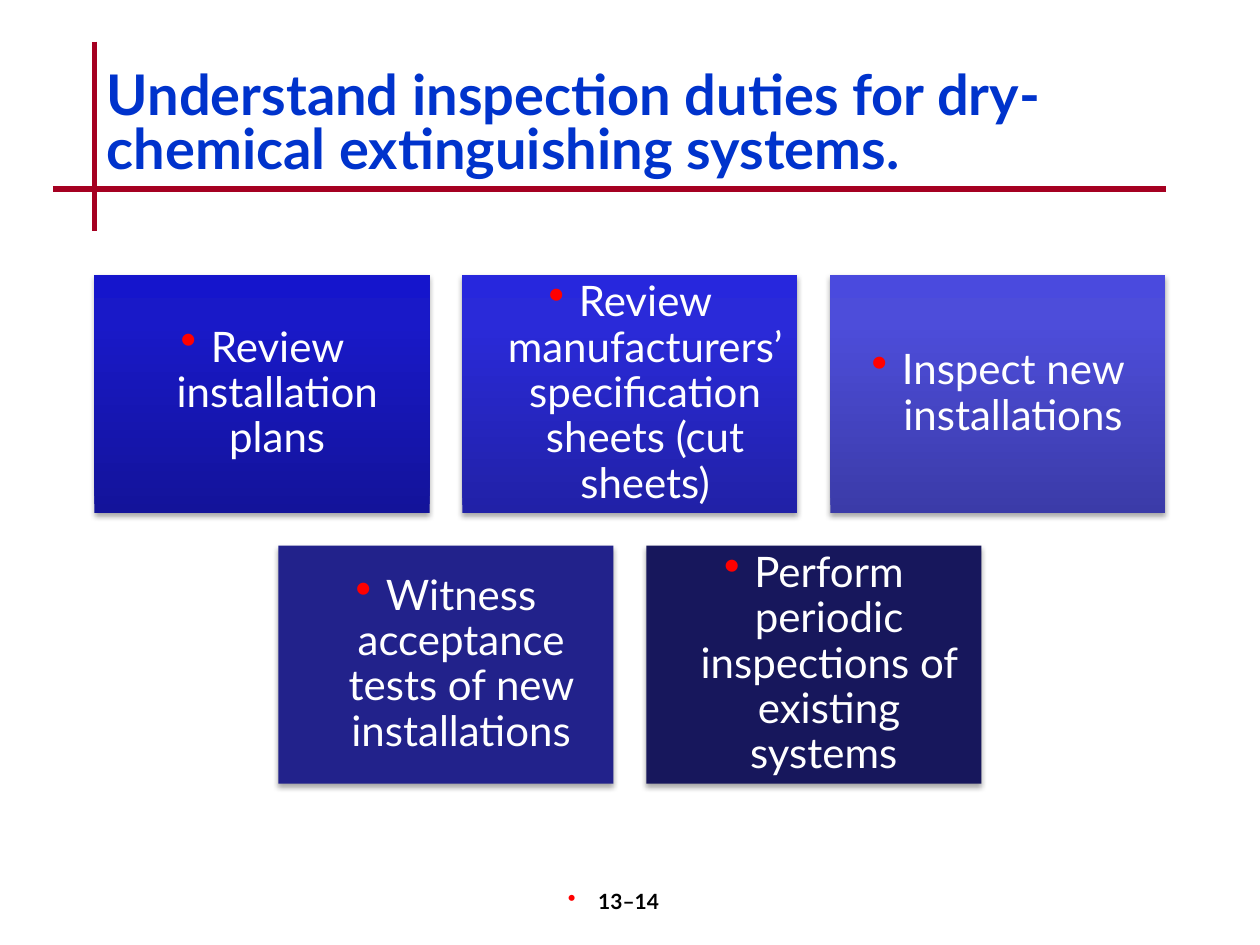
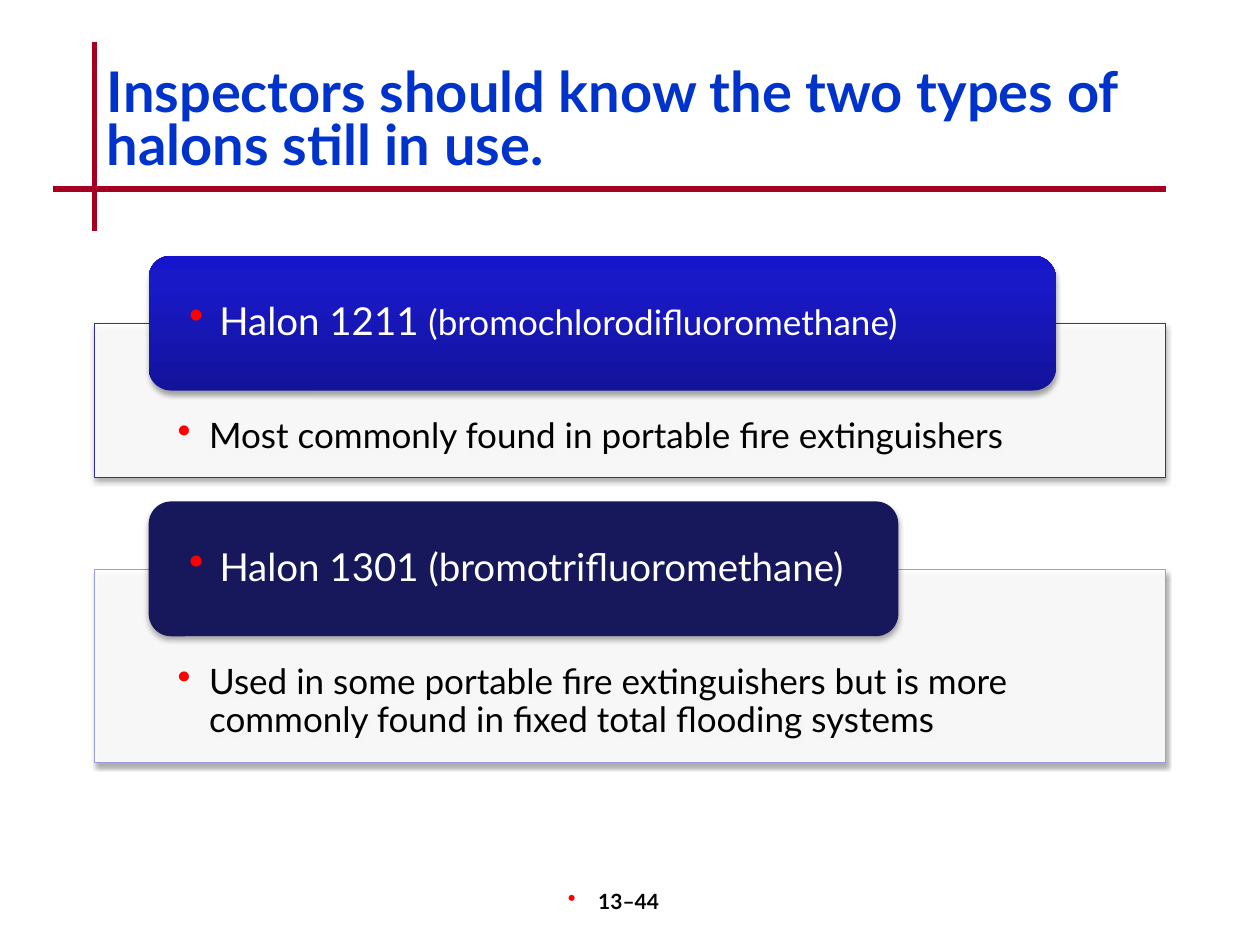
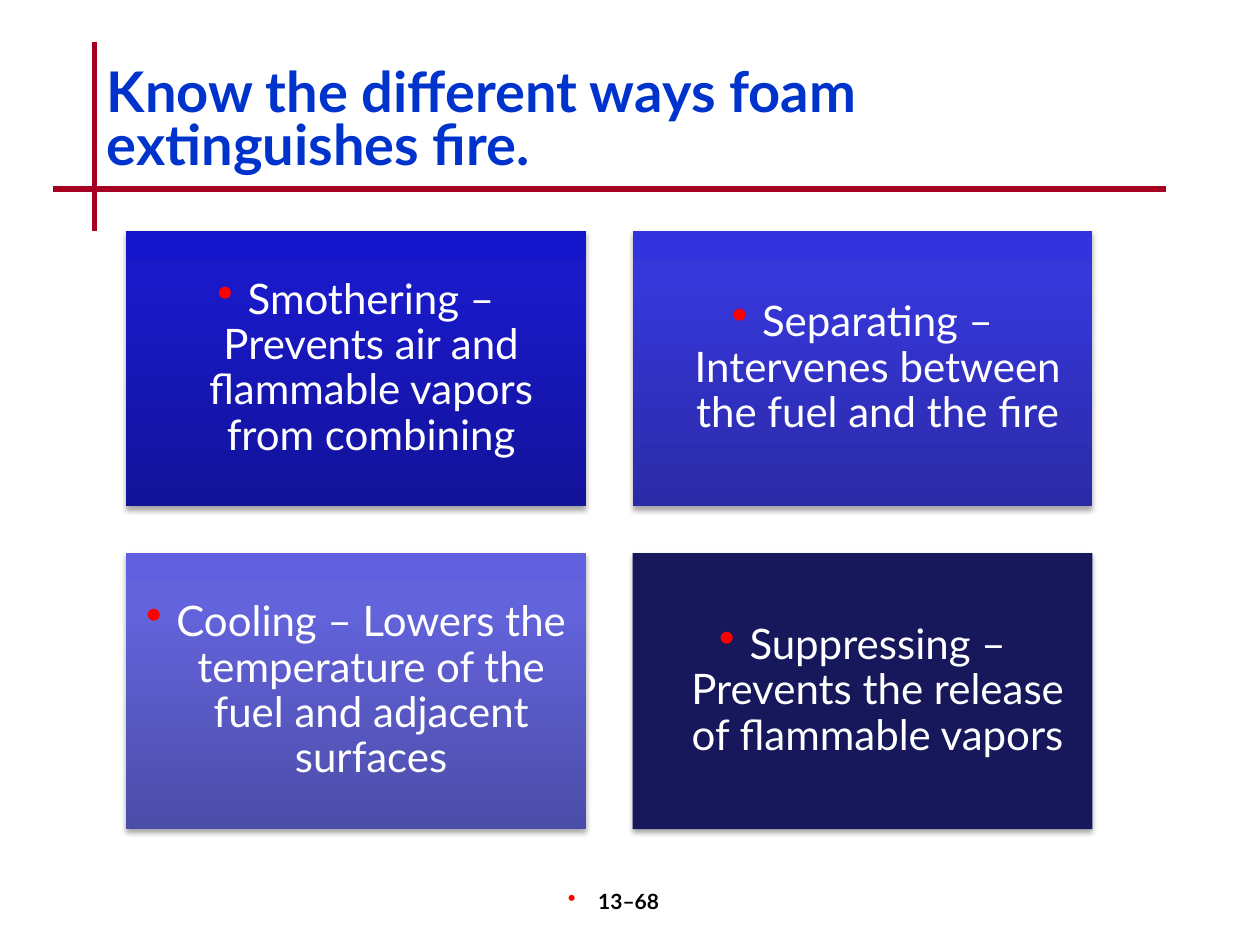
"""Build three slides on fire extinguishing systems."""
import lxml.etree
import pptx
import pptx.dml.color
import pptx.enum.shapes
import pptx.enum.text
import pptx.oxml.ns
import pptx.util

Inches = pptx.util.Inches
Pt = pptx.util.Pt
RGBColor = pptx.dml.color.RGBColor
SHAPE = pptx.enum.shapes.MSO_SHAPE
ALIGN = pptx.enum.text.PP_ALIGN
ANCHOR = pptx.enum.text.MSO_ANCHOR
qn = pptx.oxml.ns.qn

FONT = "Lato"
WHITE = RGBColor(0xFF, 0xFF, 0xFF)
BLACK = RGBColor(0x00, 0x00, 0x00)
RULE_RED = RGBColor(0xA5, 0x00, 0x21)
BULLET_RED = RGBColor(0xFF, 0x00, 0x00)
TITLE_BLUE = RGBColor(0x00, 0x33, 0xCC)
INDIGO = RGBColor(0x22, 0x22, 0x8B)
NAVY = RGBColor(0x17, 0x17, 0x5C)
ROYAL_EDGE = RGBColor(0x2E, 0x2E, 0xB9)
LILAC_EDGE = RGBColor(0x9C, 0x9C, 0xDD)
ROYAL = (RGBColor(0x13, 0x13, 0x9A), RGBColor(0x19, 0x19, 0xC8), RGBColor(0x15, 0x15, 0xCC))
COBALT = (RGBColor(0x21, 0x21, 0xA7), RGBColor(0x2A, 0x2A, 0xD9), RGBColor(0x27, 0x27, 0xDD))
IRIS = (RGBColor(0x2A, 0x2A, 0xA7), RGBColor(0x36, 0x36, 0xD9), RGBColor(0x33, 0x33, 0xDD))
VIOLET = (RGBColor(0x3B, 0x3B, 0xA8), RGBColor(0x4D, 0x4D, 0xDA), RGBColor(0x4A, 0x4A, 0xDE))
LAVENDER = (RGBColor(0x4C, 0x4C, 0xA9), RGBColor(0x63, 0x63, 0xDB), RGBColor(0x61, 0x61, 0xDF))

LEFT, SPAN = 0.75, 8.5
INDENT = 0.24


def add_xml(parent, tag, **attributes):
    """Append a DrawingML element with the given attributes."""
    values = {key: str(value) for key, value in attributes.items()}
    return lxml.etree.SubElement(parent, qn(tag), values)


def add_bullet(paragraph, indent=INDENT):
    """Give a paragraph a hanging red bullet."""
    properties = paragraph._p.get_or_add_pPr()
    properties.set("marL", str(Inches(indent)))
    properties.set("indent", str(-Inches(indent)))
    add_xml(add_xml(properties, "a:buClr"), "a:srgbClr", val=BULLET_RED)
    add_xml(properties, "a:buSzPct", val=110000)
    add_xml(properties, "a:buChar", char="•")


def write(shape, parts, color, insets=(0.1, 0.05, 0.1, 0.05), bullet=None,
          align=ALIGN.LEFT, anchor=ANCHOR.TOP, spacing=0.9, bold=False):
    """Fill a shape with one paragraph of (text, size) parts."""
    frame = shape.text_frame
    frame.word_wrap = True
    frame.vertical_anchor = anchor
    (frame.margin_left, frame.margin_top,
     frame.margin_right, frame.margin_bottom) = map(Inches, insets)
    paragraph = frame.paragraphs[0]
    if bullet:
        add_bullet(paragraph, bullet)
    paragraph.alignment = align
    paragraph.line_spacing = spacing
    for text, size in parts:
        run = paragraph.add_run()
        run.text = text
        run.font.name = FONT
        run.font.size = Pt(size)
        run.font.bold = bold
        run.font.color.rgb = color


def paint(shape, fill):
    """Fill a shape with one colour or with a gradient rising from the bottom."""
    if isinstance(fill, RGBColor):
        shape.fill.solid()
        shape.fill.fore_color.rgb = fill
        return
    shape.fill.gradient()
    shape.fill.gradient_angle = 90
    stops = shape._element.spPr.find(".//" + qn("a:gsLst"))
    for stop in list(stops):
        stops.remove(stop)
    for share, color in zip((0, 80, 100), fill):
        add_xml(add_xml(stops, "a:gs", pos=share * 1000), "a:srgbClr", val=color)


def add_block(slide, kind, box, fill, edge=None):
    """Add a filled shape with a soft shadow below it."""
    block = slide.shapes.add_shape(kind, *map(Inches, box))
    paint(block, fill)
    if edge:
        block.line.color.rgb = edge
        block.line.width = Pt(0.75)
    else:
        block.line.fill.background()
    block.shadow.inherit = False
    effects = block._element.spPr.find(qn("a:effectLst"))
    shadow = add_xml(effects, "a:outerShdw", blurRad=Pt(3.1), dist=Pt(1.8),
                     dir=5400000, rotWithShape=0)
    add_xml(add_xml(shadow, "a:srgbClr", val=BLACK), "a:alpha", val=35000)
    return block


def add_rule(slide, *ends):
    """Draw one of the red title rules."""
    rule = slide.shapes.add_connector(
        pptx.enum.shapes.MSO_CONNECTOR.STRAIGHT, *map(Inches, ends))
    rule.line.color.rgb = RULE_RED
    rule.line.width = Pt(3)
    add_xml(rule._element.spPr, "a:effectLst")


def add_page(deck, title, number, title_top=0.5):
    """Add a slide with its crossed rules, page number and title."""
    slide = deck.slides.add_slide(deck.slide_layouts[6])
    add_rule(slide, LEFT, 0.33, LEFT, 1.83)
    add_rule(slide, 0.42, 1.5, LEFT + SPAN, 1.5)
    footer = slide.shapes.add_textbox(*map(Inches, (3.92, 7, 2.08, 0.5)))
    write(footer, [(number, 12)], BLACK, insets=(0.1, 0.05, 0.28, 0.05),
          bullet=INDENT, align=ALIGN.CENTER, spacing=1.0, bold=True)
    heading = slide.shapes.add_textbox(*map(Inches, (LEFT, title_top, SPAN, 1)))
    write(heading, [(title, 32)], TITLE_BLUE, spacing=0.8, bold=True)
    return slide


def add_tiles(slide, rows, left, top, span, height, gap):
    """Lay out rows of equal tiles, each row centred in the span."""
    columns = max(map(len, rows))
    width = (span - gap * (columns - 1)) / columns
    for row, tiles in enumerate(rows):
        row_width = len(tiles) * (width + gap) - gap
        start = left + (span - row_width) / 2
        for column, (text, fill) in enumerate(tiles):
            box = (start + column * (width + gap), top + row * (height + gap), width, height)
            tile = add_block(slide, SHAPE.RECTANGLE, box, fill)
            write(tile, [(text, 24)], WHITE, insets=(0.1,) * 4, bullet=INDENT,
                  align=ALIGN.CENTER, anchor=ANCHOR.MIDDLE)


def add_halon(slide, top, label_width, panel_height, label, fill, detail, edge):
    """Add a detail panel with a rounded label over its upper edge."""
    panel = add_block(slide, SHAPE.RECTANGLE, (LEFT, top + 0.54, SPAN, panel_height), WHITE, edge)
    white = panel._element.spPr.find(qn("a:solidFill") + "/" + qn("a:srgbClr"))
    add_xml(white, "a:alpha", val=90000)
    write(panel, [(detail, 20)], BLACK, insets=(0.66, 0.75, 0.66, 0.16), bullet=0.25)
    tab = add_block(slide, SHAPE.ROUNDED_RECTANGLE, (LEFT + 0.43, top, label_width, 1.07), fill)
    write(tab, label, WHITE, insets=(0.27, 0, 0.27, 0), bullet=INDENT, anchor=ANCHOR.MIDDLE)


def main():
    """Build and save the deck."""
    deck = pptx.Presentation()
    deck.slide_width, deck.slide_height = Inches(10), Inches(7.5)

    duties = add_page(deck, "Understand inspection duties for dry-chemical extinguishing systems.",
                      "13–14", title_top=0.53)
    add_tiles(duties, [
        [("Review installation plans", ROYAL),
         ("Review manufacturers’ specification sheets (cut sheets)", COBALT),
         ("Inspect new installations", VIOLET)],
        [("Witness acceptance tests of new installations", INDIGO),
         ("Perform periodic inspections of existing systems ", NAVY)],
    ], left=LEFT, top=2.18, span=SPAN, height=1.89, gap=0.26)

    halons = add_page(deck, "Inspectors should know the two types of halons still in use.", "13–44")
    add_halon(halons, 2.03, 7.2, 1.22,
              [("Halon 1211 ", 22), ("(bromochlorodifluoromethane)", 20)], ROYAL,
              "Most commonly found in portable fire extinguishers", ROYAL_EDGE)
    add_halon(halons, 3.98, 5.95, 1.53,
              [("Halon 1301 (bromotrifluoromethane)", 22)], NAVY,
              "Used in some portable fire extinguishers but is more commonly found "
              "in fixed total flooding systems", LILAC_EDGE)

    foam = add_page(deck, "Know the different ways foam extinguishes fire.", "13–68")
    add_tiles(foam, [
        [("Smothering – Prevents air and flammable vapors from combining", ROYAL),
         ("Separating – Intervenes between the fuel and the fire", IRIS)],
        [("Cooling – Lowers the temperature of the fuel and adjacent surfaces", LAVENDER),
         ("Suppressing – Prevents the release of flammable vapors", NAVY)],
    ], left=1, top=1.83, span=7.67, height=2.19, gap=0.37)

    deck.save("out.pptx")


if __name__ == "__main__":
    main()
